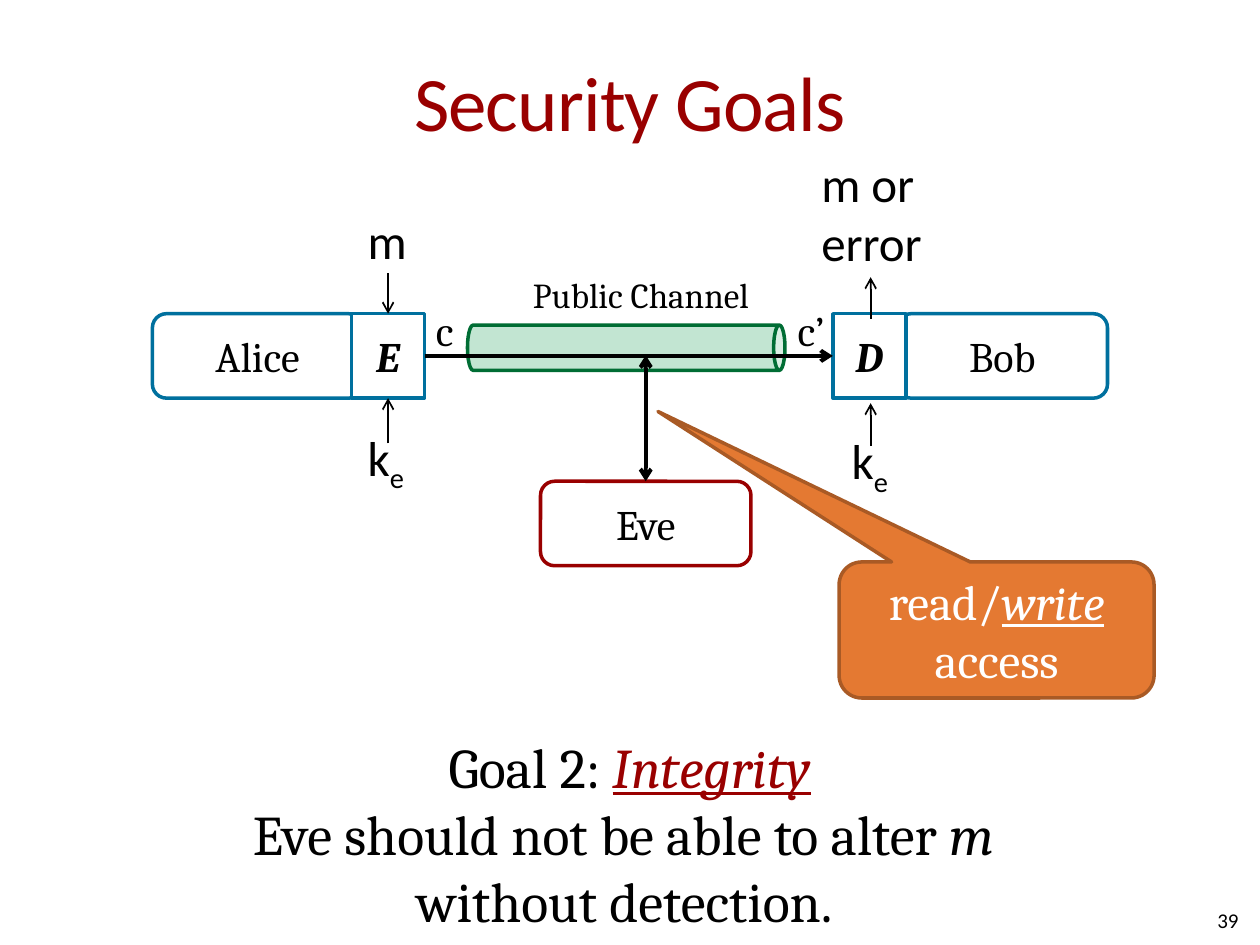
import pptx
import pptx.dml.color
import pptx.enum.shapes
import pptx.enum.text
import pptx.oxml
import pptx.oxml.ns
import pptx.util
from pptx.util import Inches

RGBColor = pptx.dml.color.RGBColor
Pt = pptx.util.Pt
Shape = pptx.enum.shapes.MSO_SHAPE
Align = pptx.enum.text.PP_ALIGN
Anchor = pptx.enum.text.MSO_ANCHOR
AutoSize = pptx.enum.text.MSO_AUTO_SIZE

BLACK = RGBColor(0x00, 0x00, 0x00)
WHITE = RGBColor(0xFF, 0xFF, 0xFF)
RED = RGBColor(0x99, 0x00, 0x00)
BLUE = RGBColor(0x00, 0x70, 0x9E)
GREEN = RGBColor(0x00, 0x94, 0x46)
DARK_GREEN = RGBColor(0x00, 0x6D, 0x34)
ORANGE = RGBColor(0xE4, 0x79, 0x32)
DARK_ORANGE = RGBColor(0xA9, 0x5A, 0x25)

TOP, LEFT, BOTTOM, RIGHT = range(4)
PARTY_WIDTH, PARTY_HEIGHT, CIPHER_WIDTH = 1.67, 0.67, 0.58
EMPHASIS = {"italic": True, "underline": True}
PADDING = {"inset": 0.1, "margin_top": Inches(0.05), "margin_bottom": Inches(0.05)}


def set_attributes(target, values):
    for name, value in values.items():
        setattr(target, name, value)


def write(shape, paragraphs, size, font="Cambria", color=BLACK,
          align=Align.LEFT, inset=0, **frame_format):
    """Fill a shape with paragraphs, each a list of (text, font values) runs."""
    frame = shape.text_frame
    margins = dict.fromkeys(
        ("margin_left", "margin_top", "margin_right", "margin_bottom"), Inches(inset))
    set_attributes(frame, {"word_wrap": True, **margins, **frame_format})
    for index, runs in enumerate(paragraphs):
        paragraph = frame.add_paragraph() if index else frame.paragraphs[0]
        paragraph.alignment = align
        for text, values in runs:
            if text == "\n":
                paragraph.add_line_break()
                continue
            values = dict(values)
            run = paragraph.add_run()
            run.text = text
            run.font.color.rgb = values.pop("color", color)
            for name in ("baseline", "spc"):
                if name in values:
                    run.font._element.set(name, str(values.pop(name)))
            set_attributes(run.font, {"name": font, "size": Pt(size), **values})


def add_text(slide, box, paragraphs, size, **options):
    shape = slide.shapes.add_textbox(*map(Inches, box))
    write(shape, paragraphs, size, **options)


def add_label(slide, box, runs, size, **options):
    """Add one line of text that keeps its own width."""
    add_text(slide, box, [runs], size, word_wrap=False,
             auto_size=AutoSize.SHAPE_TO_FIT_TEXT, **options)


def add_block(slide, kind, box, fill, line):
    shape = slide.shapes.add_shape(kind, *map(Inches, box))
    shape.shadow.inherit = False
    shape.fill.solid()
    shape.fill.fore_color.rgb = fill
    shape.line.color.rgb = line
    shape.line.width = Pt(2)
    return shape


def add_named_block(slide, kind, box, name, line, **font_values):
    shape = add_block(slide, kind, box, WHITE, line)
    write(shape, [[(name, font_values)]], 24, align=Align.CENTER,
          vertical_anchor=Anchor.MIDDLE)
    return shape


def add_arrow(slide, start, end, width=1, ends=("tailEnd",)):
    connector = slide.shapes.add_connector(
        pptx.enum.shapes.MSO_CONNECTOR.STRAIGHT, *map(Inches, start + end))
    connector.line.color.rgb = BLACK
    connector.line.width = Pt(width)
    line = connector.line._get_or_add_ln()
    namespace = pptx.oxml.ns.nsdecls("a")
    for name in ends:
        line.append(pptx.oxml.parse_xml(f'<a:{name} {namespace} type="arrow"/>'))
    connector._element.spPr.append(pptx.oxml.parse_xml(f"<a:effectLst {namespace}/>"))
    return connector


def add_title(slide, box):
    add_text(slide, box, [[("Security Goals", {"spc": -50})]], 44, font="Calibri",
             color=RED, align=Align.CENTER, vertical_anchor=Anchor.MIDDLE)


def add_slide_number(slide, box):
    add_text(slide, box, [[("39", {})]], 12, font="Calibri", align=Align.RIGHT,
             vertical_anchor=Anchor.MIDDLE)


def add_channel(slide, left, top, length, height):
    # The can stands upright, so it is turned about its centre.
    box = (left + (length - height) / 2, top + (height - length) / 2, height, length)
    channel = add_block(slide, Shape.CAN, box, GREEN, DARK_GREEN)
    channel.rotation = 90
    color = channel.fill._xPr.find(".//" + pptx.oxml.ns.qn("a:srgbClr"))
    color.append(pptx.oxml.parse_xml(
        f'<a:alpha {pptx.oxml.ns.nsdecls("a")} val="24000"/>'))
    add_label(slide, (left + 0.52, top - 0.41, 1.78, 0.34),
              [("Public Channel", {})], 20)


def add_party(slide, left, top, name, cipher_left, cipher):
    add_named_block(slide, Shape.ROUNDED_RECTANGLE,
                    (left, top, PARTY_WIDTH, PARTY_HEIGHT), name, BLUE)
    return add_named_block(slide, Shape.RECTANGLE,
                           (cipher_left, top, CIPHER_WIDTH, PARTY_HEIGHT),
                           cipher, BLUE, bold=True, italic=True)


def add_key(slide, left, top):
    add_label(slide, (left, top, 0.51, 0.57), [("k", {}), ("e", {"baseline": -25000})],
              28, font="Calibri", **PADDING)


def add_message(slide, box, lines):
    add_text(slide, box, [[(line, {})] for line in lines], 28, font="Calibri",
             word_wrap=False, **PADDING)


def add_encryption(slide, left, top):
    cipher = add_party(slide, left, top, "Alice", left + 1.58, "E")
    middle = left + 1.58 + CIPHER_WIDTH / 2
    bottom = top + PARTY_HEIGHT
    add_message(slide, (middle - 0.26, top - 0.87, 0.5, 0.5), ["m"])
    message_arrow = add_arrow(slide, (middle, top - 0.32), (middle, top))
    message_arrow.end_connect(cipher, TOP)
    key_arrow = add_arrow(slide, (middle, bottom + 0.36), (middle, bottom))
    key_arrow.end_connect(cipher, BOTTOM)
    add_key(slide, middle - 0.26, bottom + 0.18)
    return cipher


def add_decryption(slide, left, top):
    cipher = add_party(slide, left + 0.51, top, "Bob", left, "D")
    middle = left + 0.3
    bottom = top + PARTY_HEIGHT
    add_message(slide, (left - 0.19, top - 1.32, 1, 1), ["m or", "error"])
    add_arrow(slide, (middle, top + 0.04), (middle, top - 0.29))
    add_arrow(slide, (middle, bottom + 0.38), (middle, bottom + 0.04))
    add_key(slide, middle - 0.25, bottom + 0.21)
    return cipher


def add_transmission(slide, sender, receiver, top):
    connector = add_arrow(slide, (3.37, top), (6.61, top), 2.25)
    connector.begin_connect(sender, RIGHT)
    connector.end_connect(receiver, LEFT)
    for left, width, text in ((3.46, 0.15, "c"), (6.33, 0.23, "c’")):
        add_label(slide, (left, top - 0.4, width, 0.4), [(text, {})], 24)


def add_eavesdropper(slide, left, top):
    eve = add_named_block(slide, Shape.ROUNDED_RECTANGLE,
                          (left, top, PARTY_WIDTH, PARTY_HEIGHT), "Eve", RED)
    middle = left + PARTY_WIDTH / 2
    tap = add_arrow(slide, (middle, top), (middle, top - 1), 2.25,
                    ("headEnd", "tailEnd"))
    tap.begin_connect(eve, TOP)


def add_access_callout(slide, box):
    callout = add_block(slide, Shape.ROUNDED_RECTANGULAR_CALLOUT, box,
                        ORANGE, DARK_ORANGE)
    for index, value in enumerate((-1.075, -1.606, 0.167)):
        callout.adjustments[index] = value
    write(callout, [[("read/", {}), ("write", EMPHASIS), (" access", {})]], 28,
          color=WHITE, align=Align.CENTER, vertical_anchor=Anchor.MIDDLE, **PADDING)


def add_goal(slide, box):
    add_text(slide, box, [
        [("Goal 2: ", {}), ("Integrity", {"color": RED, **EMPHASIS})],
        [("Eve should not be able to alter ", {}), ("m ", {"italic": True}),
         ("\n", {}), ("without detection. ", {})],
    ], 32, align=Align.CENTER, word_wrap=False, auto_size=AutoSize.SHAPE_TO_FIT_TEXT)


def main():
    presentation = pptx.Presentation()
    presentation.slide_width, presentation.slide_height = Inches(10), Inches(7.5)
    slide = presentation.slides.add_slide(presentation.slide_layouts[6])
    add_title(slide, (0.5, 0.17, 9, 1.25))
    add_slide_number(slide, (7.5, 7.1, 2.33, 0.4))
    add_channel(slide, 3.71, 2.58, 2.52, 0.36)
    sender = add_encryption(slide, 1.21, 2.49)
    receiver = add_decryption(slide, 6.61, 2.49)
    add_transmission(slide, sender, receiver, 2.82)
    add_eavesdropper(slide, 4.29, 3.82)
    add_access_callout(slide, (6.66, 4.46, 2.5, 1.08))
    add_goal(slide, (1.87, 5.81, 6.26, 1.62))
    presentation.save("out.pptx")


if __name__ == "__main__":
    main()
